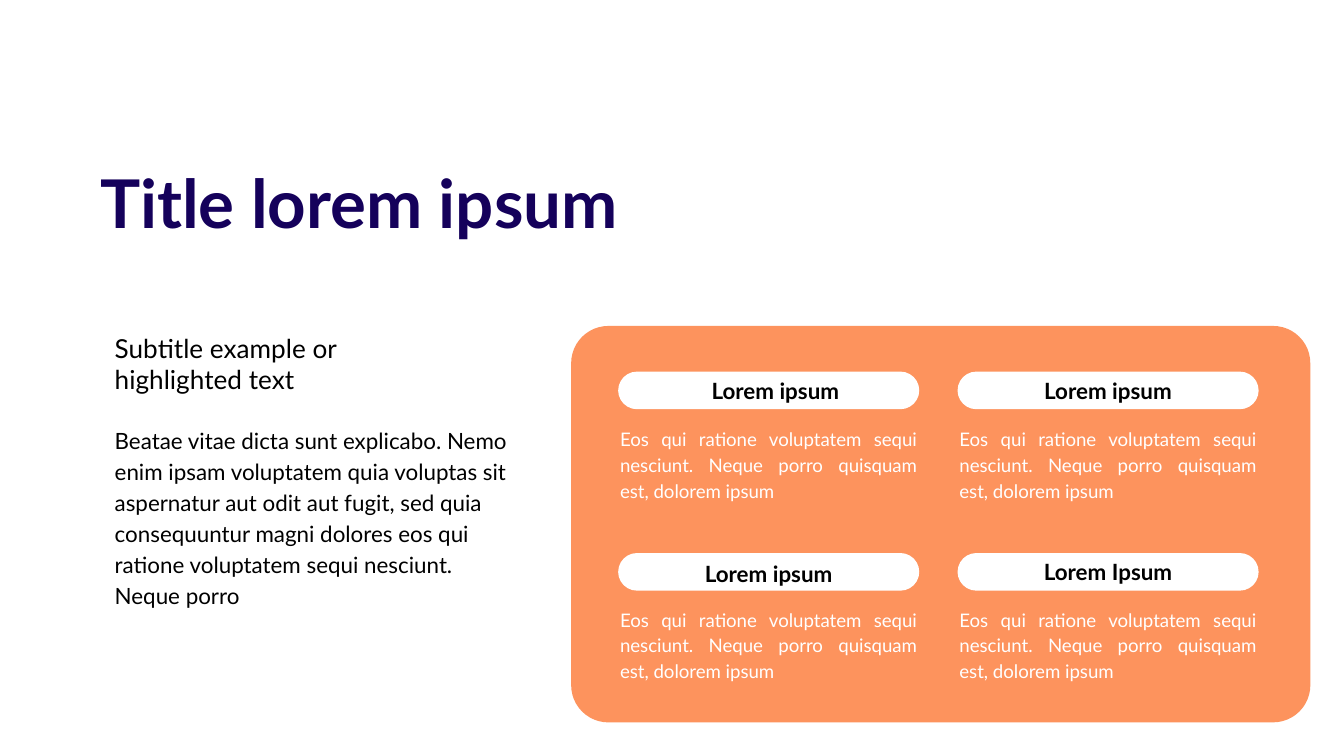
from pptx import Presentation
from pptx.dml.color import RGBColor
from pptx.enum import shapes, text
from pptx.util import Pt

PX = 4572  # 200 px to the inch
FONT = "Lato"
NAVY = RGBColor(0x15, 0x01, 0x5B)
ORANGE = RGBColor(0xFD, 0x93, 0x5D)
WHITE = RGBColor(0xFF, 0xFF, 0xFF)
BLACK = RGBColor(0, 0, 0)
LEFT, MID, JUST = (text.PP_ALIGN.LEFT, text.PP_ALIGN.CENTER,
                   text.PP_ALIGN.JUSTIFY)

# Content
TITLE = "Title lorem ipsum"
SUB = "Subtitle example or highlighted text"
BODY = ("Beatae vitae dicta sunt explicabo. Nemo enim ipsam voluptatem quia "
        "voluptas sit aspernatur aut odit aut fugit, sed quia consequuntur "
        "magni dolores eos qui ratione voluptatem sequi nesciunt. Neque porro")
NOTE = ("Eos qui ratione voluptatem sequi nesciunt. "
        "Neque porro quisquam est, dolorem ipsum")
# Each card: heading, then its shift from the centre of the pill
CARDS = [[("Lorem ipsum", 10, 0), ("Lorem ipsum", 0, 0)],
         [("Lorem ipsum", 0, 2), ("Lorem Ipsum", 0, 0)]]

# Card grid
COLS = (920, 1425)
ROWS = ((553, 612), (823, 880))  # top of pill, top of note
PILL_W, PILL_H = 448, 56
HEAD_W, HEAD_H = 416, 80
NOTE_W, NOTE_H = 481, 156


def place(shape, x, y, w, h):
    shape.left, shape.top = x * PX, y * PX
    shape.width, shape.height = w * PX, h * PX


def write(shape, words, size, color, align=LEFT, bold=False, space=1.0):
    frame = shape.text_frame
    frame.word_wrap = True
    frame.auto_size = text.MSO_AUTO_SIZE.SHAPE_TO_FIT_TEXT
    frame.vertical_anchor = text.MSO_ANCHOR.MIDDLE
    frame.margin_left = frame.margin_right = 20 * PX
    frame.margin_top = frame.margin_bottom = 20 * PX
    para = frame.paragraphs[0]
    para.alignment, para.line_spacing = align, space
    para.space_before = Pt(0)
    run = para.add_run()
    run.text = words
    font = run.font
    font.name, font.size, font.bold = FONT, Pt(size), bold
    font.color.rgb = color


def add_text(slide, spot, *args, **style):
    box = slide.shapes.add_textbox(0, 0, 0, 0)
    place(box, *spot)
    write(box, *args, **style)


def add_round(slide, spot, fill, curve):
    shape = slide.shapes.add_shape(
        shapes.MSO_SHAPE.ROUNDED_RECTANGLE, 0, 0, 0, 0)
    place(shape, *spot)
    shape.adjustments[0] = curve
    shape.shadow.inherit = False
    shape.fill.solid()
    shape.fill.fore_color.rgb = fill
    shape.line.fill.background()


def main():
    deck = Presentation()
    deck.slide_width, deck.slide_height = 2000 * PX, 1125 * PX
    slide = deck.slides.add_slide(deck.slide_layouts[5])

    # Title and left column
    title = slide.shapes.title
    place(title, 129, 232, 1094, 150)
    write(title, TITLE, 36, NAVY, bold=True, space=0.9)
    add_text(slide, (151, 474, 550, 134), SUB, 14, BLACK)
    add_text(slide, (151, 608, 636, 320), BODY, 12, BLACK, space=1.15)

    # Panel with four cards
    add_round(slide, (850, 485, 1100, 590), ORANGE, 0.094)
    for (top, low), row in zip(ROWS, CARDS):
        for x, (head, dx, dy) in zip(COLS, row):
            add_round(slide, (x, top, PILL_W, PILL_H), WHITE, 0.5)
            add_text(slide, (x + (PILL_W - HEAD_W) // 2 + dx,
                             top + (PILL_H - HEAD_H) // 2 + dy,
                             HEAD_W, HEAD_H),
                     head, 12, BLACK, align=MID, bold=True)
            add_text(slide, (x + (PILL_W - NOTE_W) // 2, low, NOTE_W, NOTE_H),
                     NOTE, 10, WHITE, align=JUST, space=1.15)

    deck.save("out.pptx")


if __name__ == "__main__":
    main()
